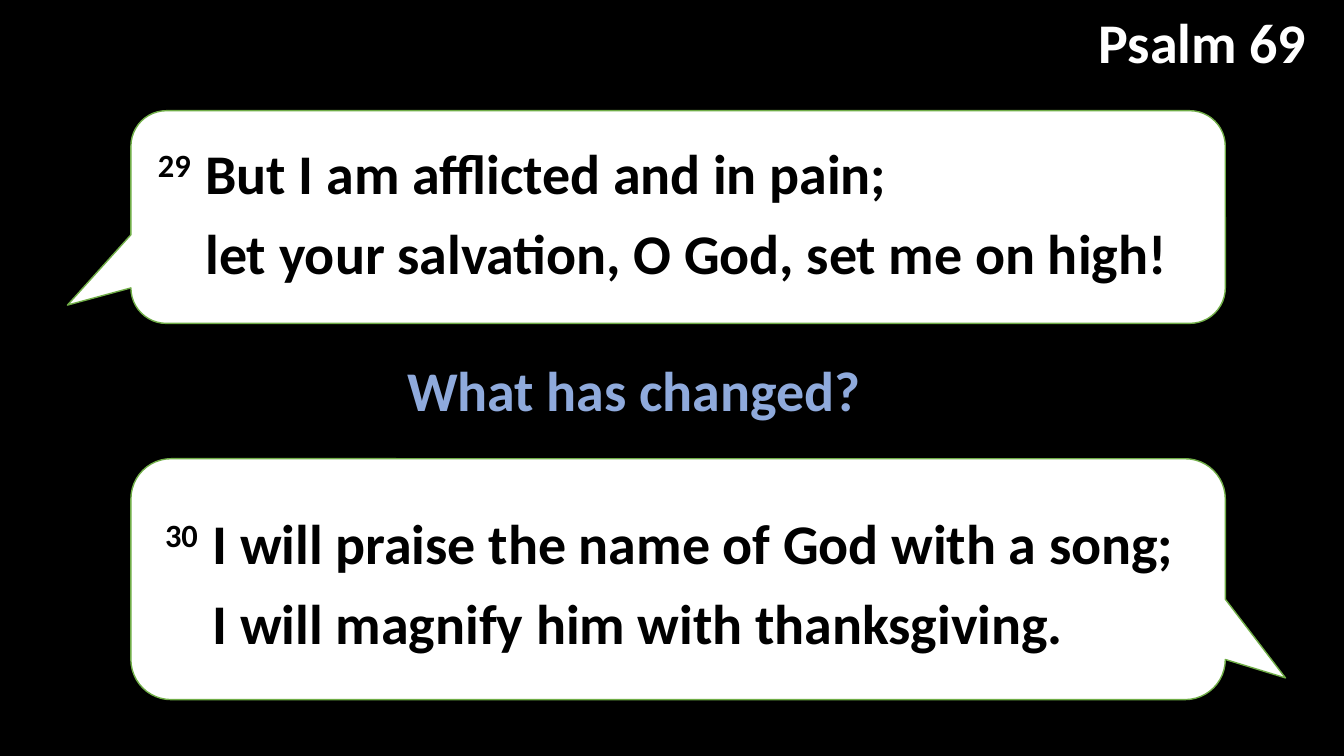
from dataclasses import dataclass

from pptx import Presentation
from pptx.dml.color import RGBColor
from pptx.enum.shapes import MSO_SHAPE
from pptx.enum.text import PP_ALIGN
from pptx.util import Cm, Pt

CALLOUT = MSO_SHAPE.ROUNDED_RECTANGULAR_CALLOUT
LEFT, RIGHT = PP_ALIGN.LEFT, PP_ALIGN.RIGHT


@dataclass(frozen=True)
class Theme:
    background: RGBColor = RGBColor(0, 0, 0)
    bubble: RGBColor = RGBColor(255, 255, 255)
    outline: RGBColor = RGBColor(0x70, 0xAD, 0x47)
    verse: RGBColor = RGBColor(0, 0, 0)
    title: RGBColor = RGBColor(255, 255, 255)
    question: RGBColor = RGBColor(0x8F, 0xAA, 0xDC)
    font: str = "Calibri"
    size: Pt = Pt(40)


theme = Theme()


def add_text_box(box, color, line_spacing, alignment=LEFT):
    """Add an empty text box and return its formatted paragraph."""
    frame = slide.shapes.add_textbox(*map(Cm, box)).text_frame
    frame.word_wrap = True
    paragraph = frame.paragraphs[0]
    paragraph_format = {"alignment": alignment, "line_spacing": line_spacing, "space_before": Pt(10)}
    for name, value in paragraph_format.items():
        setattr(paragraph, name, value)
    return paragraph, color


def add_run(paragraph, text, color):
    run = paragraph.add_run()
    run.text = text
    font_format = {"name": theme.font, "size": theme.size, "bold": True}
    for name, value in font_format.items():
        setattr(run.font, name, value)
    run.font.color.rgb = color
    return run


presentation = Presentation()
presentation.slide_width, presentation.slide_height = Cm(33.87), Cm(19.05)
slide = presentation.slides.add_slide(presentation.slide_layouts[6])
slide.background.fill.solid()
slide.background.fill.fore_color.rgb = theme.background

# Speech bubbles: top, height, pointer position, verse position, number and lines
verses = [
    (2.79, 5.36, (-0.558, 0.414), (3.73, 3.02), "29",
     ("But I am afflicted and in pain;", "let your salvation, O God, set me on high!")),
    (11.56, 6.07, (0.555, 0.41), (3.91, 12.34), "30",
     ("I will praise the name of God with a song;", "I will magnify him with thanksgiving.")),
]
for top, height, pointer, verse_position, number, lines in verses:
    bubble = slide.shapes.add_shape(CALLOUT, Cm(3.3), Cm(top), Cm(27.58), Cm(height))
    bubble.adjustments[0], bubble.adjustments[1] = pointer
    bubble.shadow.inherit = False
    bubble.fill.solid()
    bubble.fill.fore_color.rgb = theme.bubble
    bubble.line.color.rgb = theme.outline
    bubble.line.width = Pt(1)

    paragraph, color = add_text_box((*verse_position, 26.42, 4.62), theme.verse, 1.2)
    # Hanging indent: the tab after the number lines up with the second line
    properties = paragraph._p.get_or_add_pPr()
    properties.set("marL", str(Cm(1.2)))
    properties.set("indent", str(-Cm(1.2)))
    add_run(paragraph, number, color).font._element.set("baseline", "30000")
    add_run(paragraph, "\t" + lines[0], color)
    paragraph.add_line_break()
    add_run(paragraph, lines[1], color)

captions = [
    ("Psalm 69", (26.82, 0.25, 6.35, 1.8), theme.title, RIGHT),
    ("What has changed?", (10.01, 9.02, 15.21, 2.46), theme.question, LEFT),
]
for text, box, caption_color, alignment in captions:
    paragraph, color = add_text_box(box, caption_color, 0.9, alignment)
    add_run(paragraph, text, color)

presentation.save("out.pptx")
